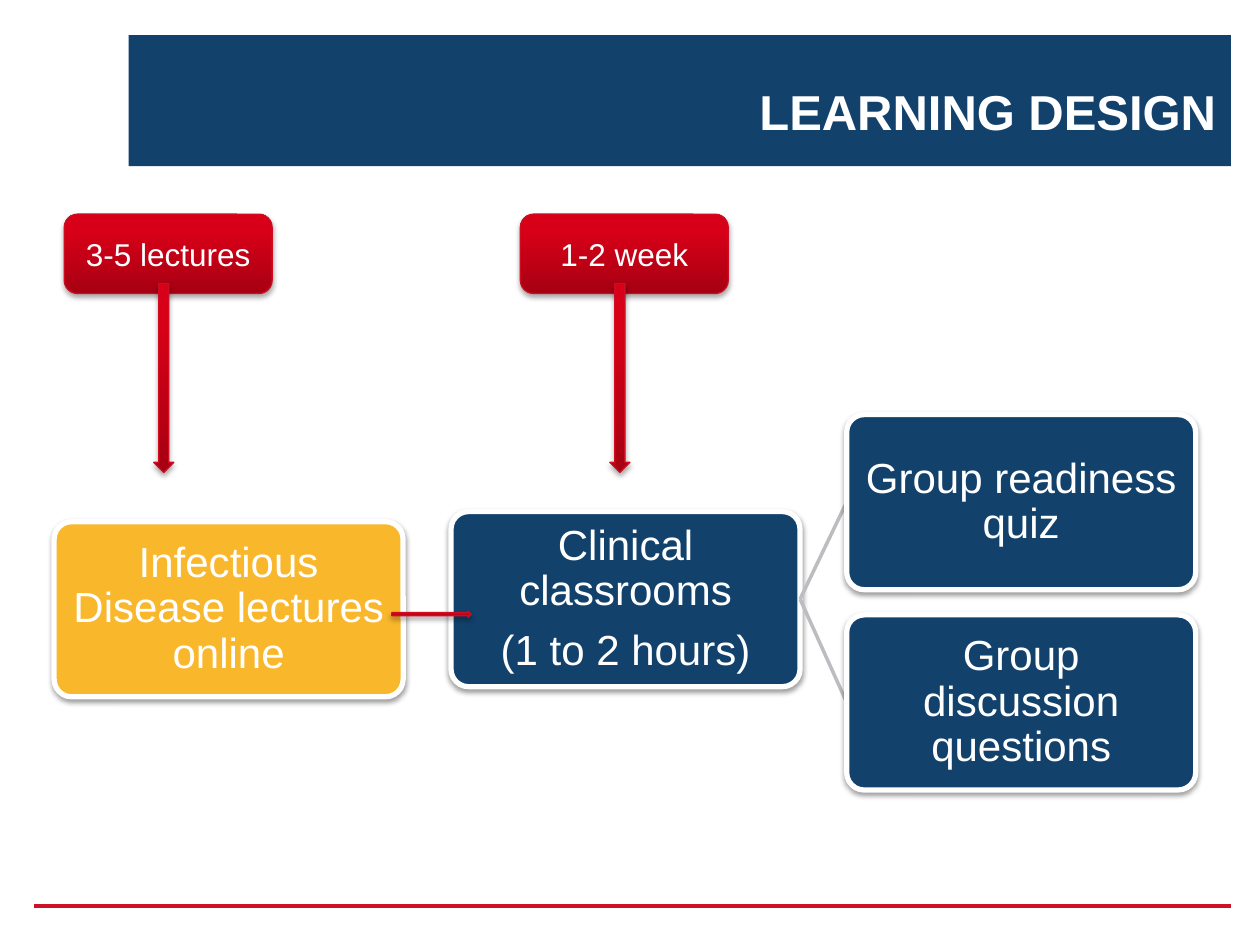
from dataclasses import dataclass

from lxml.etree import SubElement
from pptx import Presentation
from pptx.dml.color import RGBColor as Rgb
from pptx.enum.shapes import MSO_CONNECTOR as Connector, MSO_SHAPE as Preset
from pptx.enum.text import MSO_ANCHOR as Anchor, PP_ALIGN as Align
from pptx.oxml.ns import qn
from pptx.util import Inches, Pt


@dataclass(frozen=True)
class Theme:
    font: str = "Arial"
    white: str = "FFFFFF"
    navy: str = "12416C"
    gold: str = "F9B72C"
    grey: str = "BBBDC0"
    rule: str = "CE1126"
    red_edge: str = "CE0C22"
    red_dark: str = "A60012"
    red_light: str = "D80018"
    title_size: int = 28
    card_size: int = 24
    callout_size: int = 18


THEME = Theme()

TITLE = "LEARNING DESIGN"
# Paragraphs, left, top, fill
LECTURES = (["Infectious Disease lectures online"], 0.43, 4.14, THEME.gold)
CLASSROOMS = (["Clinical classrooms", "(1 to 2 hours)"], 3.58, 4.06, THEME.navy)
ACTIVITIES = [
    (["Group readiness quiz"], 6.72, 3.29, THEME.navy),
    (["Group discussion questions"], 6.72, 4.88, THEME.navy),
]
CALLOUTS = [("3-5 lectures", 0.51), ("1-2 week", 4.13)]

CARD_W, CARD_H = 2.77, 1.39
CALLOUT_TOP, CALLOUT_W, CALLOUT_H = 1.7, 1.65, 0.63
ARROW_INDENT, ARROW_TOP = 0.71, 2.25

prs = Presentation()
prs.slide_width, prs.slide_height = Inches(10), Inches(7.5)
shapes = prs.slides.add_slide(prs.slide_layouts[6]).shapes


def write(shape, paragraphs, size, align=Align.CENTER, anchor=Anchor.MIDDLE,
          bold=False, spacing=None, gap=0, inset=None):
    frame = shape.text_frame
    frame.word_wrap = True
    frame.vertical_anchor = anchor
    if inset is not None:
        frame.margin_left = frame.margin_right = Inches(inset)
        frame.margin_top = frame.margin_bottom = Inches(inset)
    for i, words in enumerate(paragraphs):
        para = frame.paragraphs[0] if i == 0 else frame.add_paragraph()
        para.alignment = align
        para.line_spacing = spacing
        if i:
            para.space_before = Pt(gap)
        run = para.add_run()
        run.text = words
        run.font.name, run.font.size, run.font.bold = THEME.font, Pt(size), bold
        run.font.color.rgb = Rgb.from_string(THEME.white)


def add_preset(preset, left, top, width, height):
    shape = shapes.add_shape(preset, *map(Inches, (left, top, width, height)))
    shape.shadow.inherit = False
    return shape


def fill_solid(shape, color):
    shape.fill.solid()
    shape.fill.fore_color.rgb = Rgb.from_string(color)


def outline(shape, color, width):
    shape.line.color.rgb = Rgb.from_string(color)
    shape.line.width = Pt(width)


def drop_shadow(shape, blur, distance, opacity):
    effects = shape._element.spPr.find(qn("a:effectLst"))
    shadow = SubElement(effects, qn("a:outerShdw"), blurRad=str(Pt(blur)),
                        dist=str(Pt(distance)), dir="5400000", rotWithShape="0")
    black = SubElement(shadow, qn("a:srgbClr"), val="000000")
    SubElement(black, qn("a:alpha"), val=str(opacity * 1000))


def add_line(x1, y1, x2, y2, color, width):
    line = shapes.add_connector(Connector.STRAIGHT, *map(Inches, (x1, y1, x2, y2)))
    outline(line, color, width)
    SubElement(line._element.spPr, qn("a:effectLst"))


def add_card(paragraphs, left, top, color):
    card = add_preset(Preset.ROUNDED_RECTANGLE, left, top, CARD_W, CARD_H)
    card.adjustments[0] = 0.1
    fill_solid(card, color)
    outline(card, THEME.white, 3)
    drop_shadow(card, 3.1, 1.6, 38)
    write(card, paragraphs, THEME.card_size, spacing=0.9, gap=8.4, inset=0.06)


def add_red(preset, left, top, width, height):
    """Add a shape shaded from dark red at the bottom to bright red."""
    shape = add_preset(preset, left, top, width, height)
    shape.fill.gradient()
    shape.fill.gradient_angle = 90
    stops = [(0, THEME.red_dark), (0.8, THEME.red_light)]
    for stop, (position, color) in zip(shape.fill.gradient_stops, stops):
        stop.position = position
        stop.color.rgb = Rgb.from_string(color)
    outline(shape, THEME.red_edge, 0.75)
    drop_shadow(shape, 3.1, 1.8, 35)
    return shape


banner = add_preset(Preset.RECTANGLE, 1.02, 0.28, 8.75, 1.04)
fill_solid(banner, THEME.navy)
banner.line.fill.background()
add_line(0.27, 7.19, 9.77, 7.19, THEME.rule, 2.25)
heading = shapes.add_textbox(*map(Inches, (2.03, 0.47, 7.72, 0.69)))
write(heading, [TITLE], THEME.title_size, align=Align.RIGHT, anchor=Anchor.BOTTOM,
      bold=True, spacing=Pt(25))

add_card(*LECTURES)
add_card(*CLASSROOMS)
_, class_left, class_top, _ = CLASSROOMS
for activity in ACTIVITIES:
    _, left, top, _ = activity
    add_line(class_left + CARD_W, class_top + CARD_H / 2,
             left, top + CARD_H / 2, THEME.grey, 2)
    add_card(*activity)

add_red(Preset.RIGHT_ARROW, 3.11, 4.85, 0.63, 0.05)
for label, left in CALLOUTS:
    callout = add_red(Preset.ROUNDED_RECTANGLE, left, CALLOUT_TOP, CALLOUT_W, CALLOUT_H)
    write(callout, [label], THEME.callout_size)
    add_red(Preset.DOWN_ARROW, left + ARROW_INDENT, ARROW_TOP, 0.16, 1.5)

prs.save("out.pptx")
